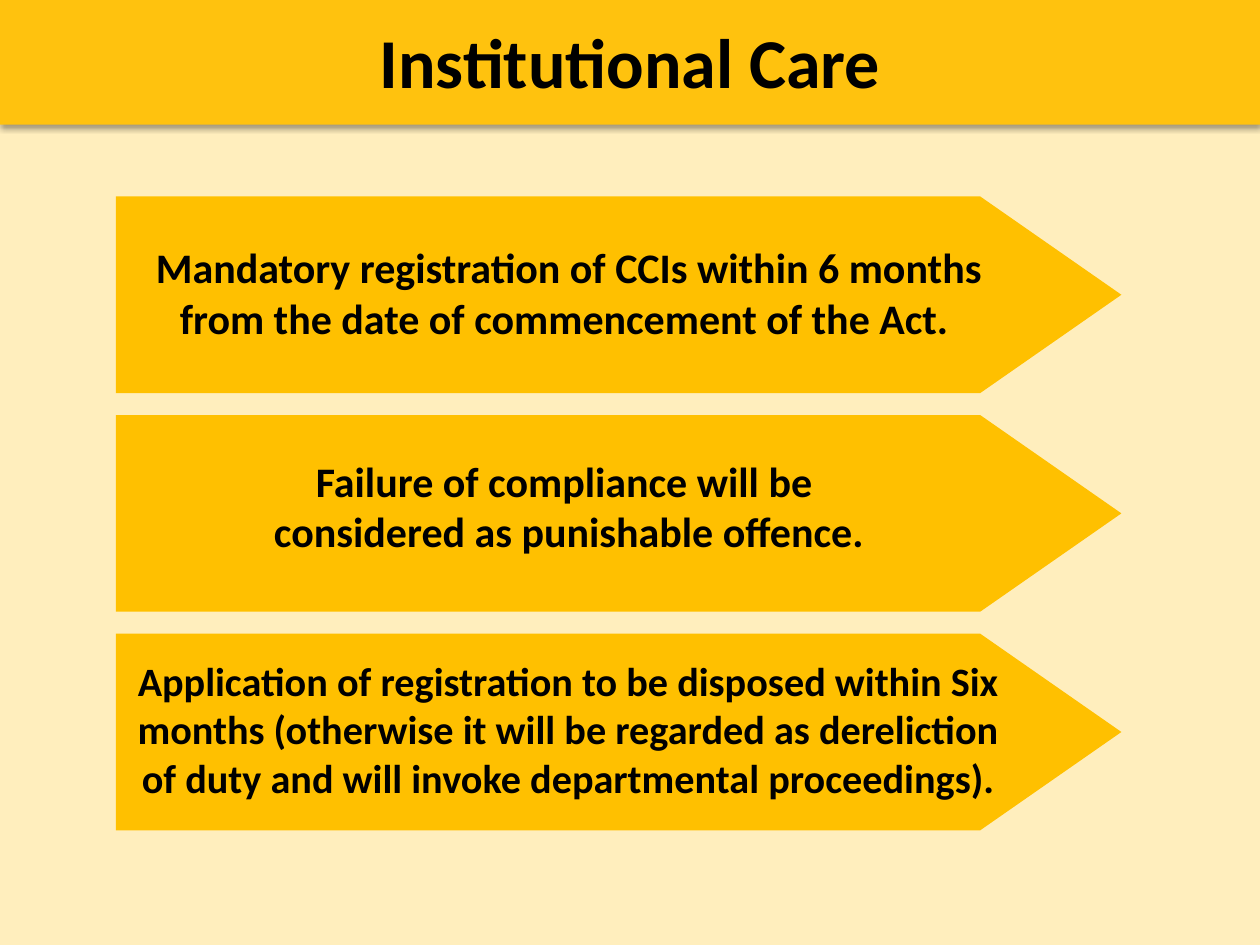
from lxml import etree
from pptx import Presentation
from pptx.dml.color import RGBColor
from pptx.enum import shapes, text
from pptx.oxml.ns import qn
from pptx.util import Inches, Pt

CREAM = RGBColor(0xFF, 0xEE, 0xBD)
HEADER_GOLD = RGBColor(0xFF, 0xC2, 0x0E)
ARROW_GOLD = RGBColor(0xFF, 0xC0, 0x00)
BLACK = RGBColor(0, 0, 0)
FONT = "Calibri"

ARROW_LEFT, ARROW_WIDTH, ARROW_HEIGHT = 0.92, 7.98, 1.56
ARROW_TOP, ARROW_STEP, ARROW_TIP = 1.56, 1.735, 1.12
TEXT_WIDTH = 7.19

# Wording, text size, text offset below the arrow's top, text height
POINTS = [
    ("Mandatory registration of CCIs within 6 months "
     "from the date of commencement of the Act. ", 24, 0.31, 0.91),
    ("Failure of compliance will be \vconsidered as punishable offence.",
     24, 0.27, 0.91),
    ("Application of registration to be disposed within Six months "
     "(otherwise it will be regarded as dereliction of duty and will "
     "invoke departmental proceedings).", 23, 0.13, 1.26),
]


def add_filled(page, kind, left, top, width, height, color):
    shape = page.shapes.add_shape(
        kind, Inches(left), Inches(top), Inches(width), Inches(height))
    shape.fill.solid()
    shape.fill.fore_color.rgb = color
    shape.line.fill.background()
    shape.shadow.inherit = False
    return shape


def add_soft_shadow(shape):
    effects = shape.element.spPr.find(qn("a:effectLst"))
    shadow = etree.SubElement(
        effects, qn("a:outerShdw"), blurRad=str(Pt(3.1)), dist=str(Pt(1.8)),
        dir="5400000", rotWithShape="0")
    color = etree.SubElement(shadow, qn("a:srgbClr"), val="000000")
    etree.SubElement(color, qn("a:alpha"), val="35000")


def write_centred(frame, wording, size):
    frame.word_wrap = True
    frame.text = wording
    para = frame.paragraphs[0]
    para.alignment = text.PP_ALIGN.CENTER
    for span in para.runs:
        span.font.name = FONT
        span.font.size = Pt(size)
        span.font.bold = True
        span.font.color.rgb = BLACK
    return para


def add_backdrop(page, width, height, band_height):
    """Place the cream page and the gold header band behind the title."""
    for area_height, color in ((height, CREAM), (band_height, HEADER_GOLD)):
        area = add_filled(page, shapes.MSO_SHAPE.RECTANGLE,
                          0, 0, width, area_height, color)
        add_soft_shadow(area)
        page.shapes.title.element.addprevious(area.element)


def set_title(page, wording, left, top, width, height):
    title = page.shapes.title
    title.left, title.top = Inches(left), Inches(top)
    title.width, title.height = Inches(width), Inches(height)
    write_centred(title.text_frame, wording, 40)
    title.text_frame.vertical_anchor = text.MSO_ANCHOR.MIDDLE


def add_arrow_point(page, left, top, wording, size, offset, text_height):
    arrow = add_filled(page, shapes.MSO_SHAPE.PENTAGON, left, top,
                       ARROW_WIDTH, ARROW_HEIGHT, ARROW_GOLD)
    arrow.adjustments[0] = ARROW_TIP / ARROW_HEIGHT
    box = page.shapes.add_textbox(Inches(left), Inches(top + offset),
                                  Inches(TEXT_WIDTH), Inches(text_height))
    para = write_centred(box.text_frame, wording, size)
    para.space_after = Pt(12)
    box.text_frame.auto_size = text.MSO_AUTO_SIZE.SHAPE_TO_FIT_TEXT


def main():
    deck = Presentation()
    deck.slide_width, deck.slide_height = Inches(10), Inches(7.5)
    page = deck.slides.add_slide(deck.slide_layouts.get_by_name("Title Only"))
    add_backdrop(page, 10, 7.5, 0.99)
    set_title(page, "Institutional Care", 0, 0.15, 10, 0.66)
    for row, point in enumerate(POINTS):
        add_arrow_point(page, ARROW_LEFT, ARROW_TOP + row * ARROW_STEP, *point)
    deck.save("out.pptx")


if __name__ == "__main__":
    main()
